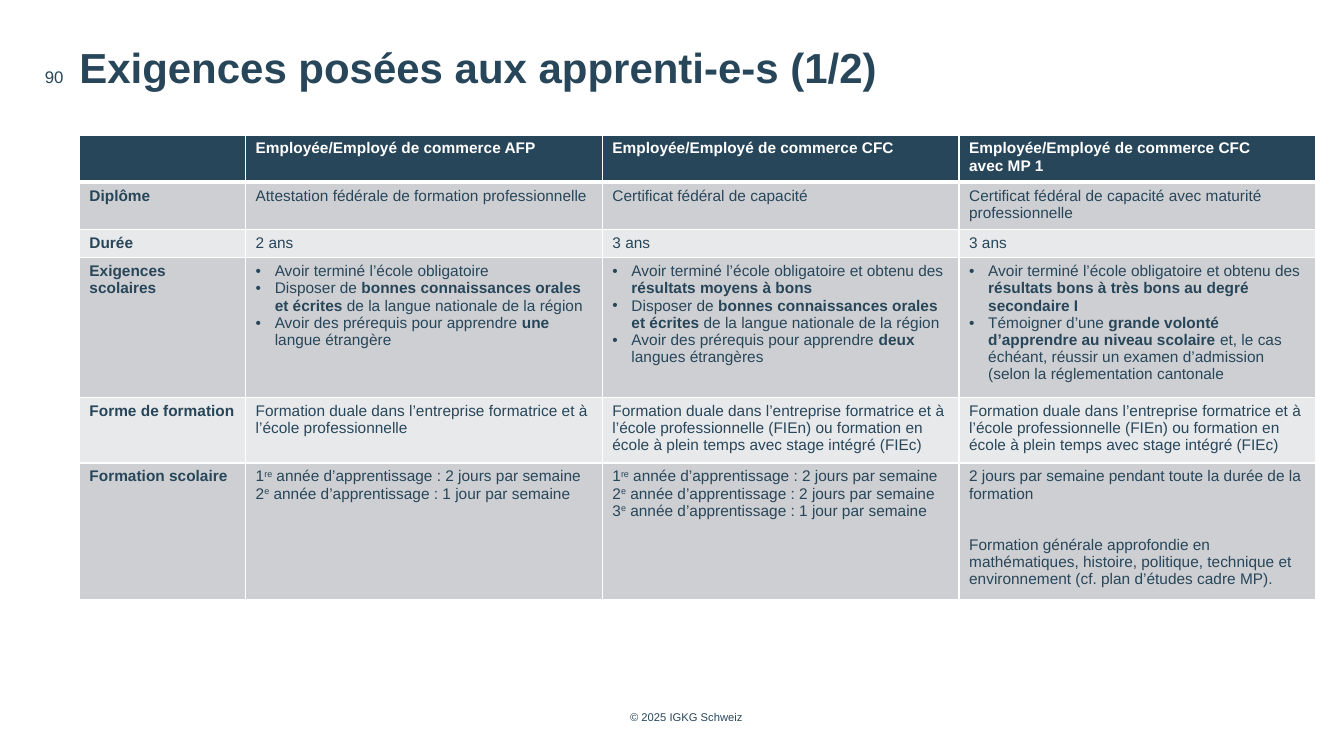
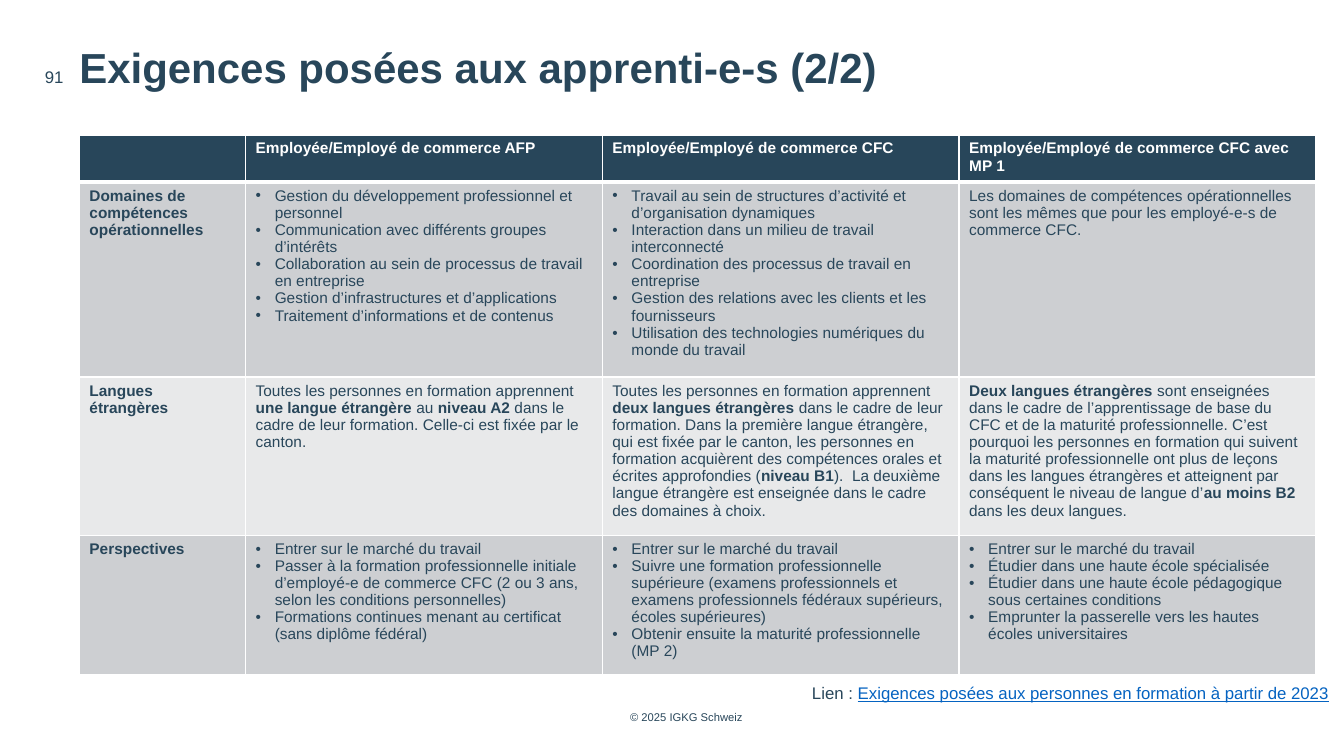
from dataclasses import dataclass
from lxml.etree import SubElement
from pptx import Presentation
from pptx.dml.color import RGBColor
from pptx.enum.text import MSO_ANCHOR, PP_ALIGN
from pptx.oxml.ns import qn
from pptx.util import Cm, Pt


@dataclass(frozen=True)
class Theme:
    font: str = "Arial"
    navy: str = "28465A"
    white: str = "FFFFFF"
    dark: str = "CDCFD2"
    light: str = "E8E9EA"
    link: str = "0563C1"
    title: int = 30
    note: int = 12
    body: int = 11
    foot: int = 8


T = Theme()
LEFT = 2
COLS = (4.19, 8.99, 8.99, 8.99)
LINE = 0.434
PAD = 0.25

AFP = "Employée/Employé de commerce AFP"
CFC = "Employée/Employé de commerce CFC"
DUAL = "Formation duale dans l’entreprise formatrice et à l’école professionnelle"
FULL = DUAL + " (FIEn) ou formation en école à plein temps avec stage intégré (FIEc)"
ORAL = ("• Disposer de *bonnes connaissances orales et écrites* "
        "de la langue nationale de la région\n")
WORK = "• Entrer sur le marché du travail\n"
ALL = "Toutes les personnes en formation apprennent "

BASICS = [
    (2, "", AFP, CFC, CFC + "\navec MP 1"),
    (2, "Diplôme", "Attestation fédérale de formation professionnelle",
     "Certificat fédéral de capacité",
     "Certificat fédéral de capacité avec maturité professionnelle"),
    (1, "Durée", "2 ans", "3 ans", "3 ans"),
    (7, "Exigences scolaires",
     "• Avoir terminé l’école obligatoire\n" + ORAL +
     "• Avoir des prérequis pour apprendre *une* langue étrangère",
     "• Avoir terminé l’école obligatoire et obtenu des "
     "*résultats moyens à bons*\n" + ORAL +
     "• Avoir des prérequis pour apprendre *deux* langues étrangères",
     "• Avoir terminé l’école obligatoire et obtenu des "
     "*résultats bons à très bons au degré secondaire I*\n"
     "• Témoigner d’une *grande volonté d’apprendre au niveau scolaire* "
     "et, le cas échéant, réussir un examen d’admission "
     "(selon la réglementation cantonale"),
    (3, "Forme de formation", DUAL, FULL, FULL),
    (7, "Formation scolaire",
     "1^re^ année d’apprentissage : 2 jours par semaine\n"
     "2^e^ année d’apprentissage : 1 jour par semaine",
     "1^re^ année d’apprentissage : 2 jours par semaine\n"
     "2^e^ année d’apprentissage : 2 jours par semaine\n"
     "3^e^ année d’apprentissage : 1 jour par semaine",
     "2 jours par semaine pendant toute la durée de la formation\n"
     "> Formation générale approfondie en mathématiques, histoire, politique, "
     "technique et environnement (cf. plan d’études cadre MP)."),
]

SKILLS = [
    (2, "", AFP, CFC, CFC + " avec MP 1"),
    (10, "Domaines de compétences opérationnelles",
     "• Gestion du développement professionnel et personnel\n"
     "• Communication avec différents groupes d’intérêts\n"
     "• Collaboration au sein de processus de travail en entreprise\n"
     "• Gestion d’infrastructures et d’applications\n"
     "• Traitement d’informations et de contenus",
     "• Travail au sein de structures d’activité et d’organisation dynamiques\n"
     "• Interaction dans un milieu de travail interconnecté\n"
     "• Coordination des processus de travail en entreprise\n"
     "• Gestion des relations avec les clients et les fournisseurs\n"
     "• Utilisation des technologies numériques du monde du travail",
     "Les domaines de compétences opérationnelles sont les mêmes "
     "que pour les employé-e-s de commerce CFC."),
    (8, "Langues étrangères",
     ALL + "*une langue étrangère* au *niveau A2* dans le cadre de leur "
     "formation. Celle-ci est fixée par le canton.",
     ALL + "*deux langues étrangères* dans le cadre de leur formation. "
     "Dans la première langue étrangère, qui est fixée par le canton, "
     "les personnes en formation acquièrent des compétences orales et écrites "
     "approfondies (*niveau B1*).  La deuxième langue étrangère est enseignée "
     "dans le cadre des domaines à choix.",
     "*Deux langues étrangères* sont enseignées dans le cadre de "
     "l’apprentissage de base du CFC et de la maturité professionnelle. "
     "C’est pourquoi les personnes en formation qui suivent la maturité "
     "professionnelle ont plus de leçons dans les langues étrangères et "
     "atteignent par conséquent le niveau de langue d’*au moins B2* "
     "dans les deux langues."),
    (7, "Perspectives",
     WORK +
     "• Passer à la formation professionnelle initiale d’employé-e de commerce "
     "CFC (2 ou 3 ans, selon les conditions personnelles)\n"
     "• Formations continues menant au certificat (sans diplôme fédéral)",
     WORK +
     "• Suivre une formation professionnelle supérieure (examens professionnels "
     "et examens professionnels fédéraux supérieurs, écoles supérieures)\n"
     "• Obtenir ensuite la maturité professionnelle (MP 2)",
     WORK +
     "• Étudier dans une haute école spécialisée\n"
     "• Étudier dans une haute école pédagogique sous certaines conditions\n"
     "• Emprunter la passerelle vers les hautes écoles universitaires"),
]


def style(para, size, color=T.navy, bold=False):
    font = para.font
    font.name, font.size, font.bold = T.font, Pt(size), bold
    font.color.rgb = RGBColor.from_string(color)


def add_text(slide, box, text, size, align=PP_ALIGN.LEFT, bold=False,
             lead=None, low=False):
    frame = slide.shapes.add_textbox(*map(Cm, box)).text_frame
    frame.word_wrap = True
    frame.margin_left = frame.margin_right = 0
    frame.margin_top = frame.margin_bottom = 0
    frame.vertical_anchor = MSO_ANCHOR.BOTTOM if low else MSO_ANCHOR.TOP
    para = frame.paragraphs[0]
    para.text, para.alignment = text, align
    if lead:
        para.line_spacing = Pt(lead)
    style(para, size, bold=bold)
    return para


def add_bullet(para):
    props = para._p.get_or_add_pPr()
    props.set("marL", str(Cm(0.48)))
    props.set("indent", str(-Cm(0.48)))
    SubElement(props, qn("a:buFont")).set("typeface", T.font)
    SubElement(props, qn("a:buChar")).set("char", "•")


def add_runs(para, text):
    for i, part in enumerate(text.split("*")):
        for j, bit in enumerate(part.split("^")):
            if not bit:
                continue
            run = para.add_run()
            run.text = bit
            if i % 2:
                run.font.bold = True
            if j % 2:
                run.font._element.set("baseline", "30000")


def write(frame, text, color, bold):
    for i, line in enumerate(text.split("\n")):
        if line or not i:
            para = frame.add_paragraph() if i else frame.paragraphs[0]
            if line.startswith("• "):
                add_bullet(para)
            if line.startswith("> "):
                para.space_before = Pt(24.6)
            style(para, T.body, color, bold)
            add_runs(para, line.removeprefix("• ").removeprefix("> "))


def add_edges(cell, row):
    props = cell._tc.get_or_add_tcPr()
    thick = {0: "lnB", 1: "lnT"}.get(row)
    for side in ("lnL", "lnR", "lnT", "lnB"):
        width = Pt(3 if side == thick else 1)
        edge = SubElement(props, qn("a:" + side), w=str(width))
        fill = SubElement(edge, qn("a:solidFill"))
        SubElement(fill, qn("a:srgbClr")).set("val", T.white)


def add_grid(slide, rows):
    tall = [PAD + LINE * row[0] for row in rows]
    size = map(Cm, (LEFT, 3.4, sum(COLS), sum(tall)))
    grid = slide.shapes.add_table(len(rows), len(COLS), *size).table
    grid.horz_banding = False
    for col, width in zip(grid.columns, COLS):
        col.width = Cm(width)
    for r, (_, *texts) in enumerate(rows):
        grid.rows[r].height = Cm(tall[r])
        back = T.navy if r == 0 else T.dark if r % 2 else T.light
        for c, text in enumerate(texts):
            cell = grid.cell(r, c)
            add_edges(cell, r)
            cell.fill.solid()
            cell.fill.fore_color.rgb = RGBColor.from_string(back)
            write(cell.text_frame, text, T.navy if r else T.white,
                  r == 0 or c == 0)


def add_page(deck, number, title, rows):
    slide = deck.slides.add_slide(deck.slide_layouts[6])
    add_text(slide, (15.37, 17.9, 3.86, 0.33), "© 2025 IGKG Schweiz",
             T.foot, PP_ALIGN.CENTER)
    add_text(slide, (LEFT, 1.2, 30.86, 1.6), title, T.title,
             bold=True, lead=32)
    add_grid(slide, rows)
    add_text(slide, (0, 1.65, 1.6, 0.53), str(number), T.note,
             PP_ALIGN.RIGHT, lead=18, low=True)
    return slide


def add_link(slide, label, text):
    para = add_text(slide, (12.24, 17.2, 21.26, 0.5), label, T.note,
                    PP_ALIGN.RIGHT)
    run = para.add_run()
    run.text = text
    run.font.underline = True
    run.font.color.rgb = RGBColor.from_string(T.link)


def main():
    deck = Presentation()
    deck.slide_width, deck.slide_height = Cm(33.87), Cm(19.05)
    add_page(deck, 90, "Exigences posées aux apprenti-e-s (1/2)", BASICS)
    last = add_page(deck, 91, "Exigences posées aux apprenti-e-s (2/2)", SKILLS)
    add_link(last, "Lien : ",
             "Exigences posées aux personnes en formation à partir de 2023")
    deck.save("out.pptx")


if __name__ == "__main__":
    main()
